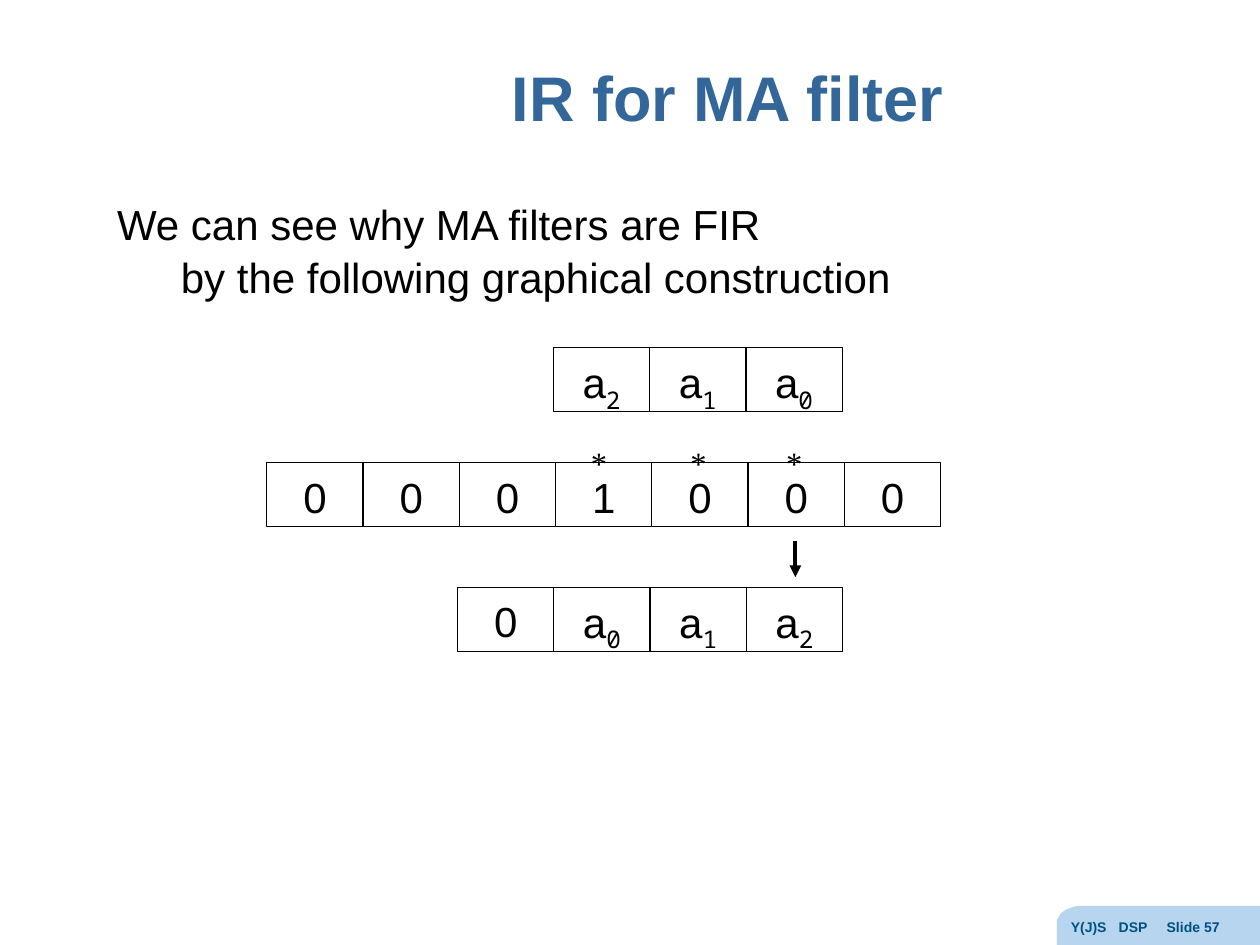
from dataclasses import dataclass

import pptx
import pptx.dml.color
import pptx.enum.dml
import pptx.enum.shapes
import pptx.enum.text
import pptx.oxml
import pptx.oxml.ns
import pptx.shapes.autoshape
import pptx.slide
import pptx.util

Pt = pptx.util.Pt
Align = pptx.enum.text.PP_ALIGN
Anchor = pptx.enum.text.MSO_ANCHOR


@dataclass(frozen=True)
class Theme:
    black: str = "000000"
    title_blue: str = "336699"
    badge_blue: str = "B7D5EF"
    badge_text: str = "005081"
    sans: str = "Arial"
    mono: str = "Noto Sans Mono"
    serif: str = "Times New Roman"
    title_size: float = 36
    body_size: float = 24
    star_size: float = 32
    badge_size: float = 8


@dataclass(frozen=True)
class Register:
    left: float
    top: float
    cells: tuple[str, ...]


THEME = Theme()
CELL_STEP = 55
CELL_HEIGHT = 36.7
LINE_SPACING = 1.05
REGISTERS = (
    Register(316.3, 198.6, ("a2", "a1", "a0")),
    Register(152.5, 264.2, ("0", "0", "0", "1", "0", "0", "0")),
    Register(261.5, 335.6, ("0", "a0", "a1", "a2")),
)
STAR_LEFTS = (330.5, 387.4, 442.1)
BADGE_OUTLINE = (
    (720, 517.7), (720, 540), (604, 540), (604, 528.5), (604, 525.6),
    (606.2, 522), (609.1, 519.8), (612.7, 518.4), (615.6, 517.7),
)


def add_text(paragraph, text: str, *, size: float = THEME.body_size, font: str = THEME.sans,
             color: str = THEME.black, bold: bool = False, baseline: int = 0) -> None:
    run = paragraph.add_run()
    run.text = text
    run.font.size = Pt(size)
    run.font.name = font
    run.font.bold = bold
    run.font.color.rgb = pptx.dml.color.RGBColor.from_string(color)
    if baseline:
        run._r.get_or_add_rPr().set("baseline", str(baseline * 1000))


def add_box(slide: pptx.slide.Slide, left: float, top: float, width: float, height: float):
    box = slide.shapes.add_textbox(Pt(left), Pt(top), Pt(width), Pt(height))
    box.text_frame.word_wrap = True
    return box.text_frame


def draw_badge(slide: pptx.slide.Slide) -> None:
    points = [(Pt(x), Pt(y)) for x, y in BADGE_OUTLINE]
    builder = slide.shapes.build_freeform(*points[0])
    builder.add_line_segments(points[1:], close=True)
    badge = builder.convert_to_shape()
    badge.shadow.inherit = False
    badge.fill.solid()
    badge.fill.fore_color.rgb = pptx.dml.color.RGBColor.from_string(THEME.badge_blue)
    badge.line.fill.background()

    paragraph = add_box(slide, 604.8, 521.3, 115.2, 18.7).paragraphs[0]
    add_text(paragraph, "Y(J)S\tDSP\tSlide 57", size=THEME.badge_size,
             color=THEME.badge_text, bold=True)
    tabs = pptx.oxml.parse_xml(f"<a:tabLst {pptx.oxml.ns.nsdecls('a')}/>")
    for position in (27.4, 54.8):
        tab = tabs.makeelement(pptx.oxml.ns.qn("a:tab"), {"pos": str(Pt(position)), "algn": "l"})
        tabs.append(tab)
    paragraph._p.get_or_add_pPr().append(tabs)


def draw_title(slide: pptx.slide.Slide) -> None:
    title = slide.shapes.title
    title.left, title.top, title.width, title.height = Pt(152.6), Pt(13), Pt(526.3), Pt(90)
    title.text_frame.vertical_anchor = Anchor.MIDDLE
    paragraph = title.text_frame.paragraphs[0]
    paragraph.alignment = Align.CENTER
    paragraph.line_spacing = 0.9
    add_text(paragraph, "IR for MA filter", size=THEME.title_size,
             color=THEME.title_blue, bold=True)


def draw_statement(slide: pptx.slide.Slide) -> None:
    frame = add_box(slide, 59.8, 108.7, 566.6, 65.5)
    first, second = frame.paragraphs[0], frame.add_paragraph()
    add_text(first, "We can see why MA filters are FIR")
    add_text(second, "by the following graphical construction")
    for paragraph in (first, second):
        paragraph.line_spacing = LINE_SPACING
    second._p.get_or_add_pPr().set("marL", str(Pt(36.5)))


def draw_cell(slide: pptx.slide.Slide, left: float, top: float, label: str) -> None:
    cell = slide.shapes.add_shape(pptx.enum.shapes.MSO_SHAPE.RECTANGLE,
                                  Pt(left), Pt(top), Pt(CELL_STEP), Pt(CELL_HEIGHT))
    cell.shadow.inherit = False
    cell.fill.background()
    cell.line.width = Pt(0.75)
    cell.line.color.rgb = pptx.dml.color.RGBColor.from_string(THEME.black)
    cell.text_frame.vertical_anchor = Anchor.TOP
    paragraph = cell.text_frame.paragraphs[0]
    paragraph.alignment = Align.CENTER
    paragraph.line_spacing = LINE_SPACING
    symbol, index = label[0], label[1:]
    add_text(paragraph, symbol)
    if index:
        add_text(paragraph, index, font=THEME.mono, baseline=-25)


def draw_register(slide: pptx.slide.Slide, register: Register) -> None:
    for column, label in enumerate(register.cells):
        draw_cell(slide, register.left + column * CELL_STEP, register.top, label)


def draw_star(slide: pptx.slide.Slide, left: float) -> None:
    paragraph = add_box(slide, left, 239.8, 27.4, 27.4).paragraphs[0]
    paragraph.line_spacing = 0.8
    paragraph.space_before = Pt(5)
    add_text(paragraph, "*", size=THEME.star_size, font=THEME.serif, baseline=-10)


def draw_arrow(slide: pptx.slide.Slide, x: float, top: float, bottom: float) -> None:
    arrow = slide.shapes.add_connector(pptx.enum.shapes.MSO_CONNECTOR.STRAIGHT,
                                       Pt(x), Pt(top), Pt(x), Pt(bottom))
    arrow.line.width = Pt(2.25)
    arrow.line.color.rgb = pptx.dml.color.RGBColor.from_string(THEME.black)
    namespace = pptx.oxml.ns.nsdecls("a")
    arrow.line._get_or_add_ln().append(
        pptx.oxml.parse_xml(f'<a:tailEnd {namespace} type="triangle"/>'))
    arrow._element.spPr.append(pptx.oxml.parse_xml(f"<a:effectLst {namespace}/>"))


def main() -> None:
    presentation = pptx.Presentation()
    presentation.slide_width, presentation.slide_height = Pt(720), Pt(540)
    slide = presentation.slides.add_slide(presentation.slide_layouts[5])
    draw_badge(slide)
    draw_title(slide)
    for register in REGISTERS:
        draw_register(slide, register)
    for left in STAR_LEFTS:
        draw_star(slide, left)
    draw_arrow(slide, 454.5, 309, 329.8)
    draw_statement(slide)
    presentation.save("out.pptx")


if __name__ == "__main__":
    main()
